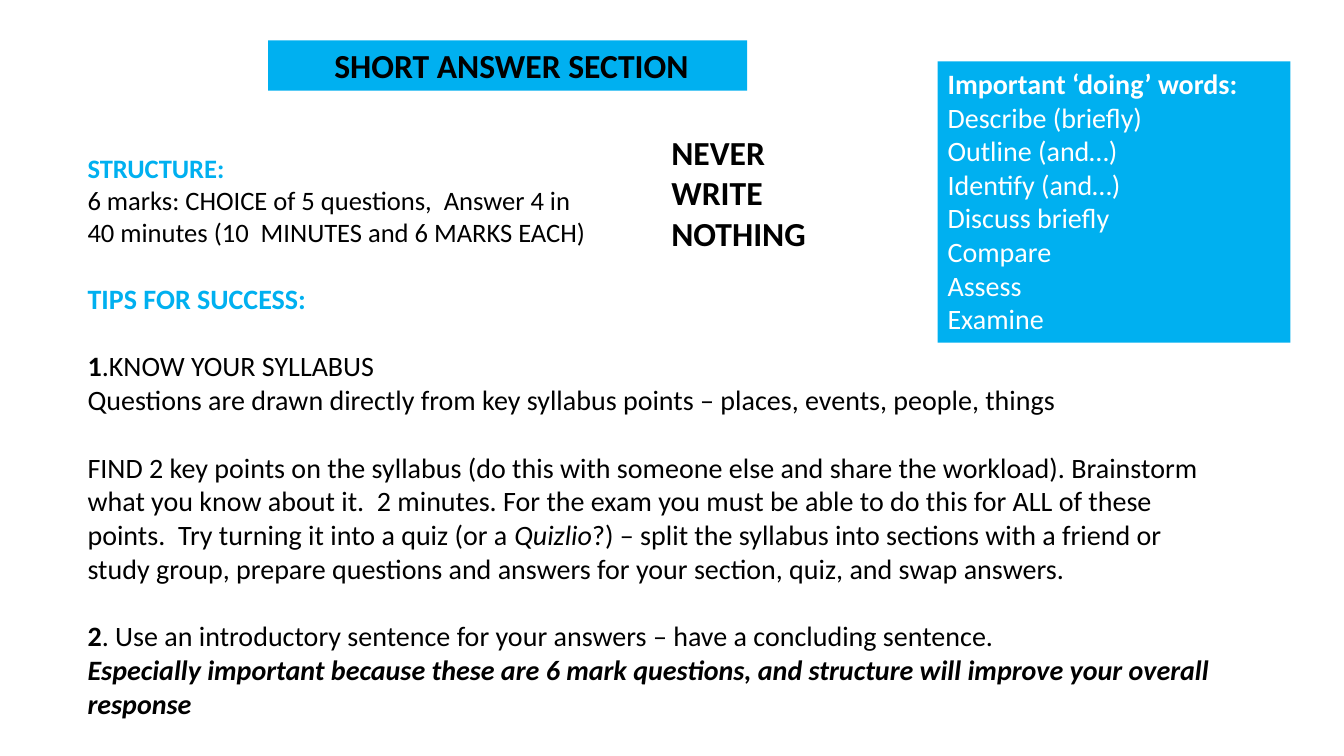
from dataclasses import dataclass

from pptx import Presentation
from pptx.dml.color import RGBColor as Rgb
from pptx.enum.shapes import MSO_SHAPE as Shape
from pptx.enum.text import MSO_ANCHOR as Anchor, MSO_AUTO_SIZE as Fit, PP_ALIGN as Align
from pptx.util import Inches, Pt


@dataclass(frozen=True)
class Theme:
    font: str = "Calibri"
    blue: str = "00B0F0"
    black: str = "000000"
    white: str = "FFFFFF"
    big: int = 24
    body: int = 20
    small: int = 19
    line: float = 1.22  # line height as a share of type size


THEME = Theme()
WORDS = ["Describe (briefly)", "Outline (and…)", "Identify (and…)",
         "Discuss briefly", "Compare", "Assess", "Examine"]


def write(frame, *runs, size=THEME.body, color=THEME.black, bold=False,
          italic=False, align=Align.LEFT, gap=0):
    """Add a paragraph; a run is text, or a pair of text and style letters."""
    first = frame.paragraphs[0]
    para = frame.add_paragraph() if first.runs else first
    para.alignment = align
    para.space_before = Pt(gap)
    for item in runs:
        text, style = (item, "") if isinstance(item, str) else item
        run = para.add_run()
        run.text = text
        font = run.font
        font.name, font.size = THEME.font, Pt(size)
        font.color.rgb = Rgb.from_string(color)
        font.bold = bold or "b" in style
        font.italic = italic or "i" in style


def set_frame(shape, top):
    frame = shape.text_frame
    frame.word_wrap = True
    frame.auto_size = Fit.SHAPE_TO_FIT_TEXT
    frame.vertical_anchor = Anchor.TOP
    frame.margin_top = Inches(top)
    return frame


def add_text(slide, box, top=0.05):
    return set_frame(slide.shapes.add_textbox(*map(Inches, box)), top)


def add_panel(slide, box, top=0.05):
    panel = slide.shapes.add_shape(Shape.RECTANGLE, *map(Inches, box))
    panel.shadow.inherit = False
    panel.fill.solid()
    panel.fill.fore_color.rgb = Rgb.from_string(THEME.blue)
    panel.line.fill.background()
    return set_frame(panel, top)


def add_tips(slide):
    gap = THEME.body * THEME.line
    tips = add_text(slide, (0.77, 2.74, 11.48, 4.48))
    write(tips, "TIPS FOR SUCCESS:", color=THEME.blue, bold=True)
    write(tips, ("1", "b"), ".KNOW YOUR SYLLABUS", gap=gap)
    write(tips, "Questions are drawn directly from key syllabus points – "
          "places, events, people, things")
    write(tips, "FIND 2 key points on the syllabus (do this with someone else "
          "and share the workload). Brainstorm what you know about it.  "
          "2 minutes. For the exam you must be able to do this for ALL of "
          "these points.  Try turning it into a quiz (or a ",
          ("Quizlio", "i"),
          "?) – split the syllabus into sections with a friend or study group, "
          "prepare questions and answers for your section, quiz, and swap "
          "answers.", gap=gap)
    write(tips, ("2", "b"), ". Use an introductory sentence for your answers – "
          "have a concluding sentence.", gap=gap)
    write(tips, "Especially important because these are 6 mark questions, and "
          "structure will improve your overall response",
          bold=True, italic=True)


def main():
    deck = Presentation()
    deck.slide_width, deck.slide_height = Inches(13.33), Inches(7.5)
    slide = deck.slides.add_slide(deck.slide_layouts[6])

    # Exam structure
    plan = add_text(slide, (0.77, 0.82, 5.54, 1.7), top=0.69)
    write(plan, "STRUCTURE:", size=THEME.small, color=THEME.blue, bold=True)
    for line in ("6 marks: CHOICE of 5 questions,  Answer 4 in",
                 "40 minutes (10  MINUTES and 6 MARKS EACH)"):
        write(plan, line, size=THEME.small)

    # Motto
    motto = add_text(slide, (6.56, 0.95, 1.98, 1.62), top=0.36)
    write(motto, "NEVER WRITE NOTHING", size=THEME.big, bold=True)

    # Tips
    add_tips(slide)

    # Title banner
    title = add_panel(slide, (2.66, 0.4, 4.75, 0.5))
    write(title, " SHORT ANSWER SECTION", size=THEME.big, bold=True,
          align=Align.CENTER)

    # Doing words
    verbs = add_panel(slide, (9.3, 0.61, 3.5, 2.79))
    write(verbs, "Important ‘doing’ words:", color=THEME.white, bold=True)
    for word in WORDS:
        write(verbs, word, color=THEME.white)

    deck.save("out.pptx")


if __name__ == "__main__":
    main()
